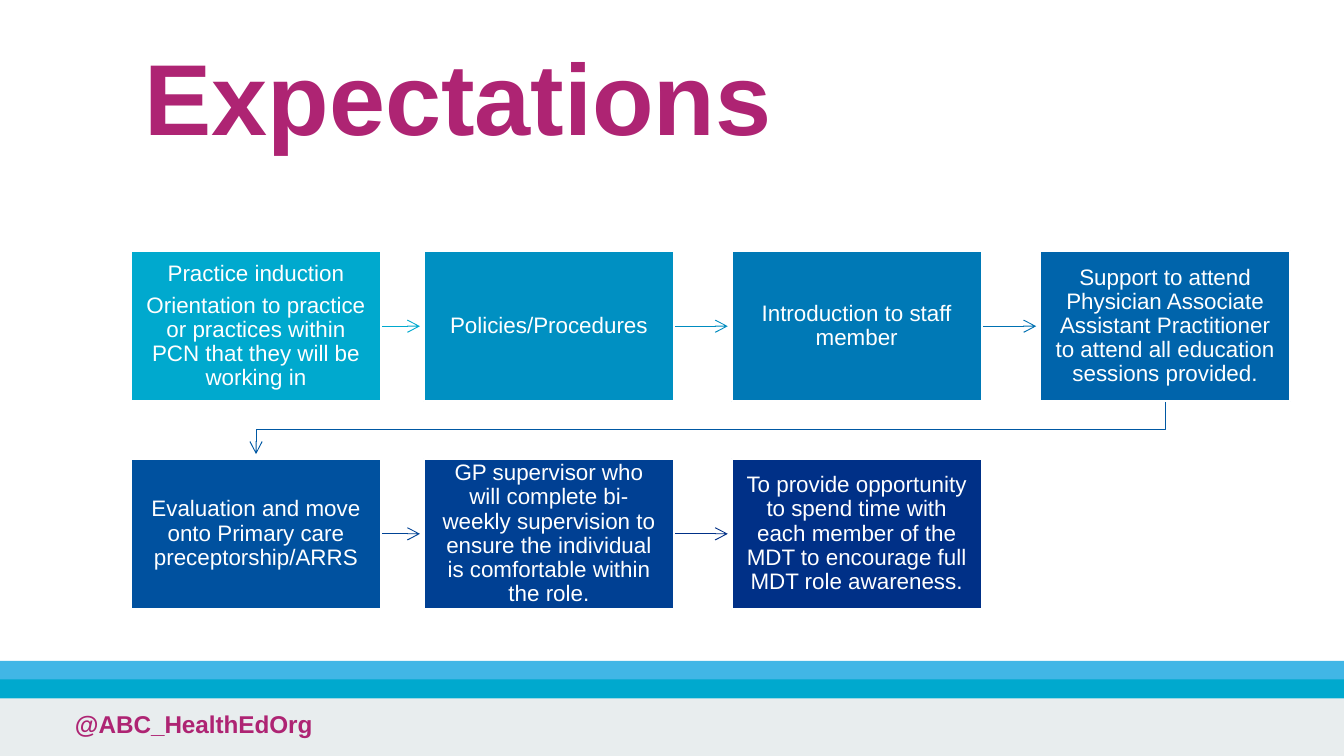
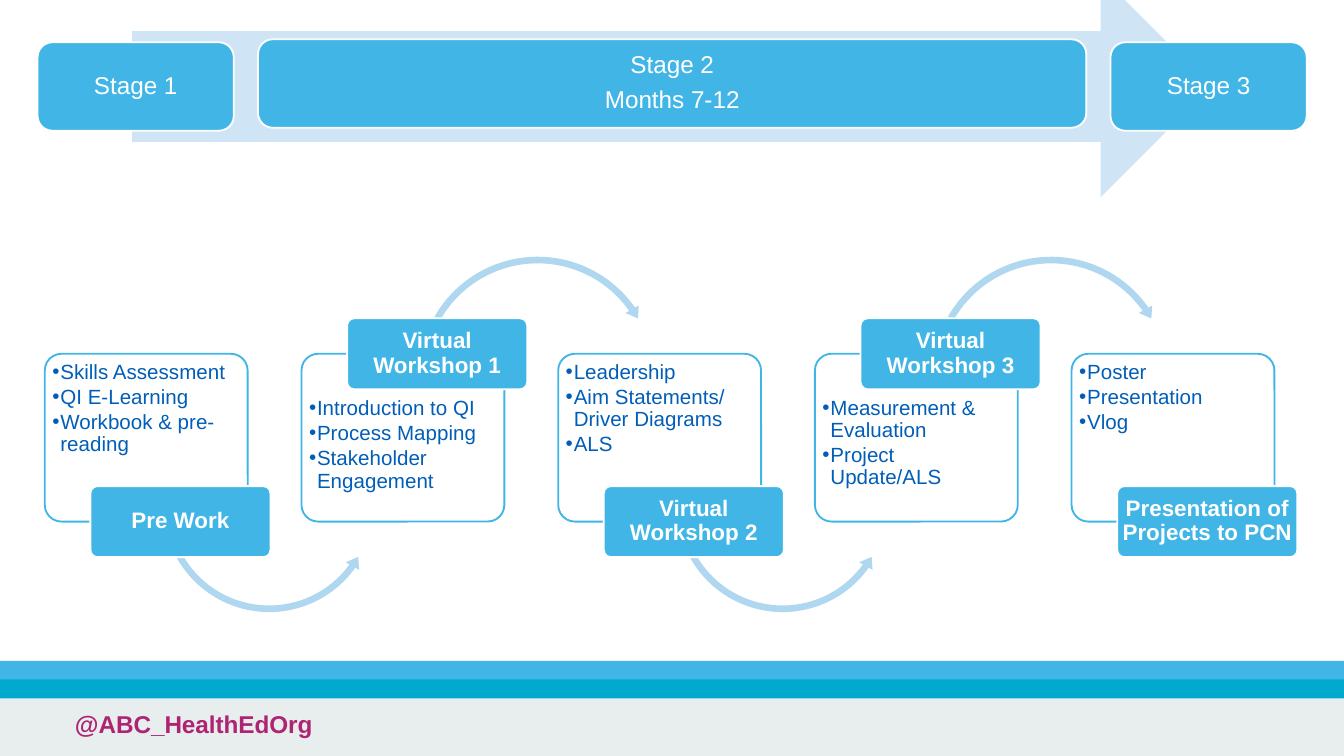
from typing import NamedTuple

import pptx
import pptx.dml.color
import pptx.enum.shapes
import pptx.enum.text
import pptx.oxml.ns
import pptx.util
from lxml import etree

RGBColor = pptx.dml.color.RGBColor
MSO_SHAPE = pptx.enum.shapes.MSO_SHAPE
PP_ALIGN = pptx.enum.text.PP_ALIGN
MSO_ANCHOR = pptx.enum.text.MSO_ANCHOR
Pt, Inches, qn = pptx.util.Pt, pptx.util.Inches, pptx.oxml.ns.qn

WIDTH, HEIGHT = Inches(10), Inches(5.625)
FONT = "Arial"
WHITE = RGBColor(0xFF, 0xFF, 0xFF)
GREY = RGBColor(0xE8, 0xED, 0xEE)
SKY = RGBColor(0x41, 0xB6, 0xE6)
AQUA = RGBColor(0x00, 0xA9, 0xCE)
MAGENTA = RGBColor(0xAE, 0x24, 0x73)
BLUE = RGBColor(0x00, 0x5E, 0xB8)
PALE_ARC = RGBColor(0xB0, 0xD7, 0xF0)
PALE_ARROW = RGBColor(0xCF, 0xE5, 0xF5)
STEP_FILLS = [RGBColor.from_string(c) for c in (
    "00A9CE", "0090C2", "0079B6", "0064AB", "00519F", "004093", "003087")]
LINK_COLOURS = [RGBColor.from_string(c) for c in (
    "00A9CE", "008CC0", "0071B2", "0058A3", "004395", "003087")]


class Area(NamedTuple):
    """A rectangle in percent of the slide's width and height."""
    left: float
    top: float
    width: float
    height: float

    def emu(self) -> tuple:
        return x(self.left), y(self.top), x(self.width), y(self.height)


class TextStyle(NamedTuple):
    size: float
    colour: RGBColor = WHITE
    bold: bool = False
    align: PP_ALIGN = PP_ALIGN.CENTER
    anchor: MSO_ANCHOR = MSO_ANCHOR.MIDDLE
    margins: tuple = (0.1, 0.05)
    line_spacing: float = 0.9
    after: float = 0.35
    bullet: bool = False


class Card(NamedTuple):
    label: str
    items: list
    raised: bool


class Stage(NamedTuple):
    lines: list
    area: Area


HANDLE = TextStyle(13, MAGENTA, True, PP_ALIGN.LEFT, MSO_ANCHOR.TOP,
                   line_spacing=1, after=0)
TITLE = TextStyle(54, MAGENTA, True, PP_ALIGN.LEFT, MSO_ANCHOR.TOP, after=0)
STEP = TextStyle(12, margins=(0.09, 0.1))
LABEL = TextStyle(12, bold=True, margins=(0.02, 0.02))
STAGE = TextStyle(13, margins=(0.05, 0.05))
LIST = TextStyle(11, BLUE, align=PP_ALIGN.LEFT, anchor=MSO_ANCHOR.TOP,
                 margins=(0.02, 0.02), after=0.15, bullet=True)

BANDS = [(Area(0, 92.4, 100, 7.6), GREY), (Area(0, 87.43, 100, 2.5), SKY),
         (Area(0, 89.88, 100, 2.5), AQUA)]

STEP_LEFTS, STEP_TOPS = (9.75, 31.55, 54.45, 77.4), (33.2, 60.67)
STEP_W, STEP_H = 18.6, 19.9
LINK_GAP = 0.1
STEPS = [
    ["Practice induction",
     "Orientation to practice or practices within PCN that they will be working in"],
    ["Policies/Procedures"],
    ["Introduction to staff member"],
    ["Support to attend Physician Associate Assistant Practitioner to attend "
     "all education sessions provided."],
    ["Evaluation and move onto Primary care preceptorship/ARRS"],
    ["GP supervisor who will complete bi-weekly supervision to ensure the "
     "individual is comfortable within the role."],
    ["To provide opportunity to spend time with each member of the MDT to "
     "encourage full MDT role awareness."],
]

CARD = Area(3.33, 46.8, 15.1, 22.2)
CARD_PITCH = 19.1
LABEL_SHIFT, LABEL_W, LABEL_H = 3.4, 13.4, 9.4
RAISED_INDENT = 0.29
LOW_ARC = (MSO_SHAPE.LEFT_CIRCULAR_ARROW, Area(8.5, 52.4, 16.4, 29.16),
           (0.03, 3.654, 21.409, 90.245, 0.035))
HIGH_ARC = (MSO_SHAPE.CIRCULAR_ARROW, Area(8.43, 33.4, 18.3, 32.53),
            (0.027, 3.245, 195, 125.755, 0.031))
CARDS = [
    Card("Pre Work", ["Skills Assessment", "QI E-Learning",
                      "Workbook & pre-reading"], False),
    Card("Virtual Workshop 1", ["Introduction to QI", "Process Mapping",
                                "Stakeholder Engagement"], True),
    Card("Virtual Workshop 2", ["Leadership", "Aim Statements/ Driver Diagrams",
                                "ALS"], False),
    Card("Virtual Workshop 3", ["Measurement & Evaluation",
                                "Project Update/ALS"], True),
    Card("Presentation of Projects to PCN", ["Poster", "Presentation", "Vlog"],
         False),
]
STAGES = [
    Stage(["Stage 1"], Area(2.8, 5.6, 14.6, 11.7)),
    Stage(["Stage 2", "Months 7-12"], Area(19.2, 5.2, 61.63, 11.7)),
    Stage(["Stage 3"], Area(82.63, 5.6, 14.6, 11.7)),
]


def x(share: float) -> int:
    return round(WIDTH * share / 100)


def y(share: float) -> int:
    return round(HEIGHT * share / 100)


def set_all(target, values: dict) -> None:
    for name, value in values.items():
        setattr(target, name, value)


def add_bullet(p) -> None:
    p.level = 1
    pPr = p._p.get_or_add_pPr()
    pPr.set("marL", str(Inches(0.06)))
    pPr.set("indent", str(-Inches(0.06)))
    etree.SubElement(pPr, qn("a:buFont")).set("typeface", FONT)
    etree.SubElement(pPr, qn("a:buChar")).set("char", "•")


def write(shape, lines: list, style: TextStyle) -> None:
    tf = shape.text_frame
    side, edge = (Inches(m) for m in style.margins)
    set_all(tf, dict(word_wrap=True, auto_size=pptx.enum.text.MSO_AUTO_SIZE.NONE,
                     vertical_anchor=style.anchor, margin_left=side,
                     margin_right=side, margin_top=edge, margin_bottom=edge))
    for i, line in enumerate(lines):
        p = tf.add_paragraph() if i else tf.paragraphs[0]
        set_all(p, dict(alignment=style.align, line_spacing=style.line_spacing,
                        space_before=Pt(0), space_after=Pt(style.size * style.after)))
        if style.bullet:
            add_bullet(p)
        r = p.add_run()
        r.text = line
        set_all(r.font, dict(name=FONT, size=Pt(style.size), bold=style.bold))
        r.font.color.rgb = style.colour


def add_block(s, kind: MSO_SHAPE, area: Area, fill: RGBColor,
              line: RGBColor | None = None, adjust: tuple = ()):
    sp = s.shapes.add_shape(kind, *area.emu())
    sp.shadow.inherit = False
    sp.fill.solid()
    sp.fill.fore_color.rgb = fill
    if line is None:
        sp.line.fill.background()
    else:
        sp.line.color.rgb = line
        sp.line.width = Pt(1)
    for i, value in enumerate(adjust):
        sp.adjustments[i] = value
    return sp


def add_arrow(s, points: list, colour: RGBColor) -> None:
    """Join the points, a straight connector for two and an outline for more."""
    points = [(x(px), y(py)) for px, py in points]
    if len(points) == 2:
        sp = s.shapes.add_connector(pptx.enum.shapes.MSO_CONNECTOR.STRAIGHT,
                                    *points[0], *points[1])
        etree.SubElement(sp.element.spPr, qn("a:effectLst"))
    else:
        builder = s.shapes.build_freeform(*points[0])
        builder.add_line_segments(points[1:], close=False)
        sp = builder.convert_to_shape()
        sp.fill.background()
        sp.shadow.inherit = False
    sp.line.color.rgb = colour
    sp.line.width = Pt(0.5)
    etree.SubElement(sp.line._get_or_add_ln(), qn("a:tailEnd")).set("type", "arrow")


def dress_master(prs, s) -> None:
    """Build the bands and the handle on a slide, then move them to the master."""
    parts = [add_block(s, MSO_SHAPE.RECTANGLE, area, fill) for area, fill in BANDS]
    handle = s.shapes.add_textbox(*Area(4.6, 93, 58.4, 7).emu())
    write(handle, ["@ABC_HealthEdOrg"], HANDLE)
    for sp in parts + [handle]:
        prs.slide_master.shapes.element.append(sp.element)


def step_area(i: int) -> Area:
    row, col = divmod(i, len(STEP_LEFTS))
    return Area(STEP_LEFTS[col], STEP_TOPS[row], STEP_W, STEP_H)


def link_points(a: Area, b: Area) -> list:
    if a.top == b.top:
        mid = a.top + a.height / 2
        return [(a.left + a.width + LINK_GAP, mid), (b.left - 3 * LINK_GAP, mid)]
    start, end = a.left + a.width / 2, b.left + b.width / 2
    bottom = a.top + a.height
    turn = (bottom + b.top) / 2
    return [(start, bottom), (start, turn), (end, turn), (end, b.top - 0.6)]


def build_expectations(s) -> None:
    title = s.shapes.title
    set_all(title, dict(zip(("left", "top", "width", "height"),
                            Area(9.75, 5.5, 76.7, 17.4).emu())))
    write(title, ["Expectations"], TITLE)
    for i, lines in enumerate(STEPS):
        area = step_area(i)
        if i < len(LINK_COLOURS):
            add_arrow(s, link_points(area, step_area(i + 1)), LINK_COLOURS[i])
        sp = add_block(s, MSO_SHAPE.RECTANGLE, area, STEP_FILLS[i], WHITE)
        write(sp, lines, STEP)


def add_card(s, card: Card, left: float, has_next: bool) -> None:
    sp = add_block(s, MSO_SHAPE.ROUNDED_RECTANGLE, CARD._replace(left=left),
                   WHITE, SKY, (0.1,))
    colour = sp.element.spPr.find(qn("a:solidFill"))[0]
    etree.SubElement(colour, qn("a:alpha")).set("val", "90000")
    write(sp, card.items, LIST)
    if card.raised:
        sp.text_frame.margin_top = Inches(RAISED_INDENT)
    if has_next:
        kind, area, adjust = HIGH_ARC if card.raised else LOW_ARC
        add_block(s, kind, area._replace(left=left + area.left), PALE_ARC,
                  adjust=adjust)
    edge = CARD.top if card.raised else CARD.top + CARD.height
    area = Area(left + LABEL_SHIFT, edge - LABEL_H / 2, LABEL_W, LABEL_H)
    label = add_block(s, MSO_SHAPE.ROUNDED_RECTANGLE, area, SKY, WHITE, (0.1,))
    write(label, [card.label], LABEL)


def build_stages(s) -> None:
    for i, card in enumerate(CARDS):
        add_card(s, card, CARD.left + i * CARD_PITCH, i < len(CARDS) - 1)
    add_block(s, MSO_SHAPE.RIGHT_ARROW, Area(9.83, -3.2, 80.3, 29.3), PALE_ARROW)
    for stage in STAGES:
        sp = add_block(s, MSO_SHAPE.ROUNDED_RECTANGLE, stage.area, SKY, WHITE)
        write(sp, stage.lines, STAGE)


def main() -> None:
    prs = pptx.Presentation()
    prs.slide_width, prs.slide_height = WIDTH, HEIGHT
    title_only, blank = prs.slide_layouts[5], prs.slide_layouts[6]
    s = prs.slides.add_slide(title_only)
    dress_master(prs, s)
    build_expectations(s)
    build_stages(prs.slides.add_slide(blank))
    prs.save("out.pptx")


if __name__ == "__main__":
    main()
